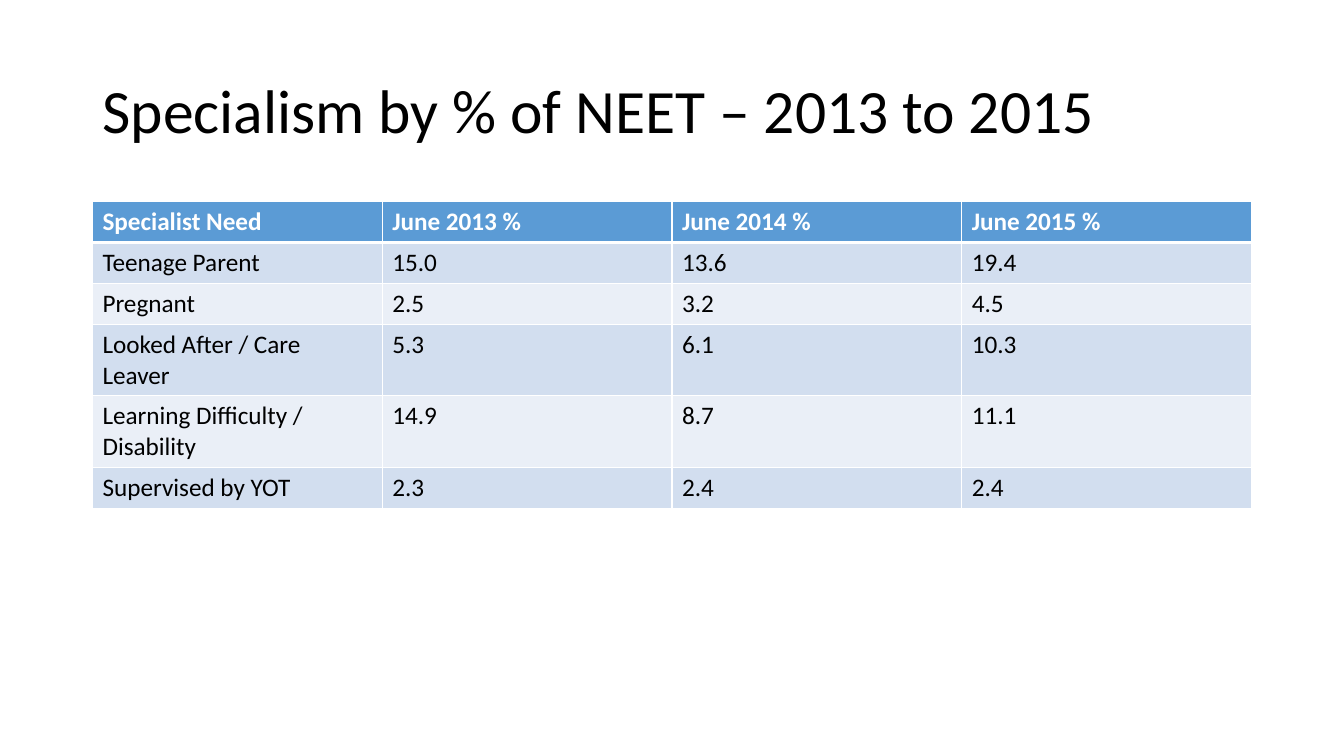
from lxml import etree
from pptx import Presentation
from pptx import util as u
from pptx.dml.color import RGBColor
from pptx.enum import text
from pptx.oxml import ns

NEEDS = [
    ("Specialist Need", "June 2013 %", "June 2014 %", "June 2015 %"),
    ("Teenage Parent", "15.0", "13.6", "19.4"),
    ("Pregnant", "2.5", "3.2", "4.5"),
    ("Looked After / Care Leaver", "5.3", "6.1", "10.3"),
    ("Learning Difficulty / Disability", "14.9", "8.7", "11.1"),
    ("Supervised by YOT", "2.3", "2.4", "2.4"),
]


def rgb(value):
    return RGBColor.from_string(value)


class Deck:
    font = "Calibri"
    black, white = "000000", "FFFFFF"
    header, bands = "5B9BD5", ("EAEFF7", "D2DEEF")
    left, width = u.Cm(2.33), u.Cm(29.21)

    def __init__(self):
        self.prs = Presentation()
        self.prs.slide_width, self.prs.slide_height = u.Cm(33.87), u.Cm(19.05)
        self.s = self.prs.slides.add_slide(self.prs.slide_layouts[5])

    def add_words(self, tf, words, size, color, bold=False):
        p = tf.paragraphs[0]
        p.alignment = text.PP_ALIGN.LEFT
        r = p.add_run()
        r.text = words
        style = {"name": self.font, "size": u.Pt(size), "bold": bold}
        for key, value in style.items():
            setattr(r.font, key, value)
        r.font.color.rgb = rgb(color)
        return p

    def title(self, words):
        sp = self.s.shapes.title
        box = {"left": self.left, "top": u.Cm(1.01),
               "width": self.width, "height": u.Cm(3.68)}
        for key, value in box.items():
            setattr(sp, key, value)
        tf = sp.text_frame
        tf.auto_size = text.MSO_AUTO_SIZE.NONE
        tf.vertical_anchor = text.MSO_ANCHOR.MIDDLE
        self.add_words(tf, words, 44, self.black).line_spacing = 0.9

    def borders(self, cell, widths):
        """Draw white cell edges; widths maps L, R, T and B to points."""
        tc_pr = cell._tc.get_or_add_tcPr()
        for side, points in widths.items():
            ln = etree.SubElement(tc_pr, ns.qn(f"a:ln{side}"), w=str(u.Pt(points)))
            fill = etree.SubElement(ln, ns.qn("a:solidFill"))
            etree.SubElement(fill, ns.qn("a:srgbClr"), val=self.white)

    def table(self, rows, top, row_height):
        frame = self.s.shapes.add_table(len(rows), len(rows[0]), self.left, top,
                                        self.width, row_height * len(rows))
        for i, row in enumerate(rows):
            is_header = i == 0
            for j, words in enumerate(row):
                cell = frame.table.cell(i, j)
                self.borders(cell, {"L": 1, "R": 1, "T": 3 if i == 1 else 1,
                                    "B": 3 if is_header else 1})
                cell.fill.solid()
                cell.fill.fore_color.rgb = rgb(self.header if is_header else self.bands[i % 2])
                self.add_words(cell.text_frame, words, 18,
                               self.white if is_header else self.black, is_header)


def main():
    deck = Deck()
    deck.title("Specialism by % of NEET – 2013 to 2015")
    deck.table(NEEDS, u.Cm(5.08), u.Cm(1.03))
    deck.prs.save("out.pptx")


if __name__ == "__main__":
    main()
